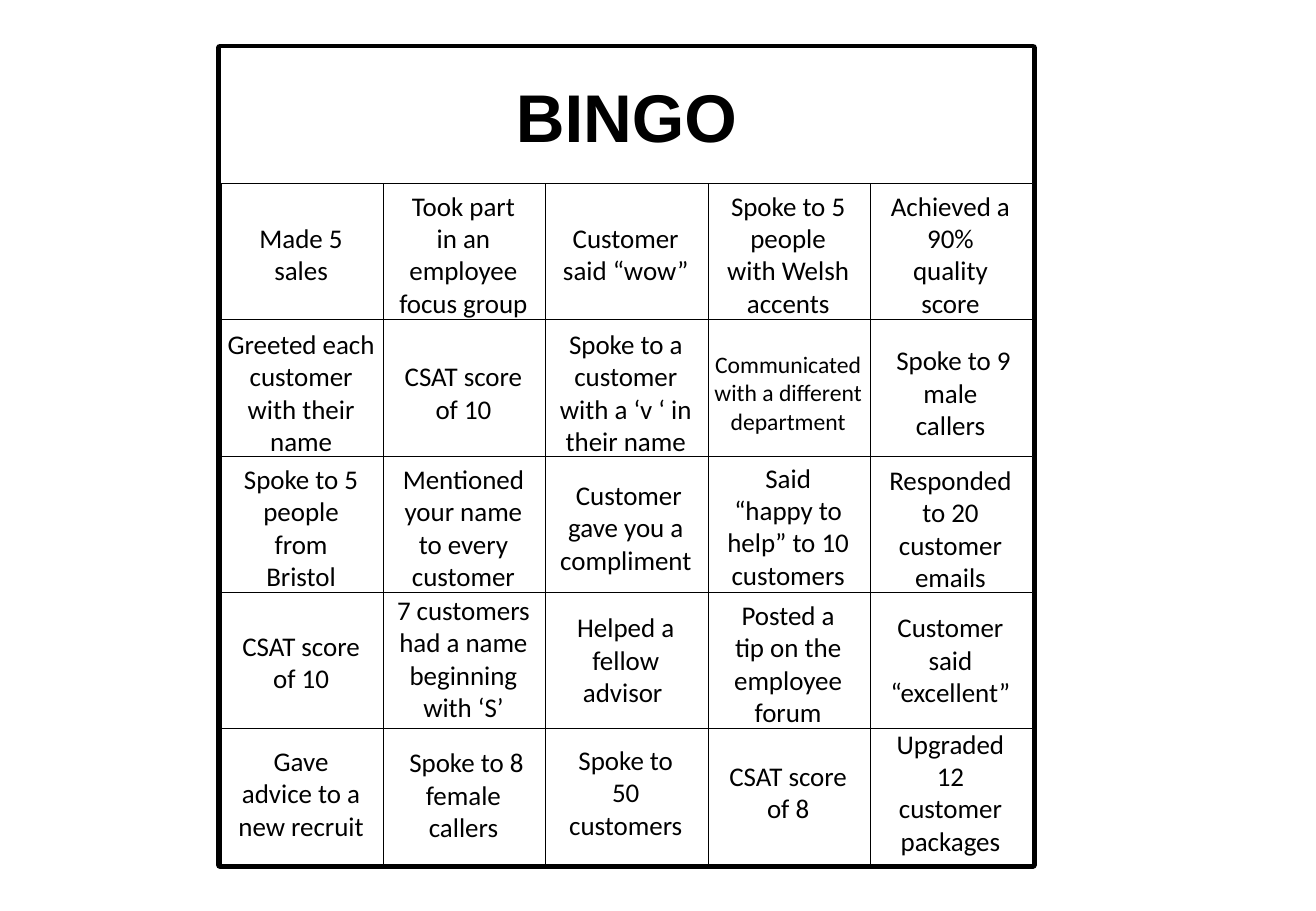
import pptx
import pptx.util
import pptx.dml.color
import pptx.enum.shapes
import pptx.enum.text

Inches = pptx.util.Inches

# Grid measures in inches
LEFT, TOP = 1.82, 0.39
CELL_W, CELL_H = 1.336, 1.122
COLS, ROWS = 5, 5
TEXT_H = 1.18
BLACK, WHITE = "000000", "FFFFFF"

# Each row: top of its texts, then (text, width, shift down, size)
TASKS = [
    (1.5, [
        ("Made 5 sales", 1.24, 0, 16),
        ("Took part in an employee focus group", 1.26, 0, 16),
        ("Customer said “wow”", 1.24, 0, 16),
        ("Spoke to 5 people with Welsh accents", 1.24, 0, 16),
        ("Achieved a 90% quality score", 1.24, 0, 16)]),
    (2.64, [
        ("Greeted each customer with their name", 1.42, 0, 16),
        ("CSAT score of 10", 1.24, 0, 16),
        ("Spoke to a customer with a ‘v ‘ in their name", 1.32, 0, 16),
        ("Communicated with a different department", 1.42, 0, 14),
        (" Spoke to 9 male callers", 1.24, 0, 16)]),
    (3.75, [
        ("Spoke to 5 people from Bristol", 1.24, 0, 16),
        ("Mentioned your name to every customer", 1.35, 0, 16),
        (" Customer gave you a compliment", 1.42, 0, 16),
        ("Said “happy to help” to 10 customers", 1.24, -0.01, 16),
        ("Responded to 20 customer emails", 1.24, 0.01, 16)]),
    (4.84, [
        ("CSAT score of 10", 1.24, 0.02, 16),
        ("7 customers had a name beginning with ‘S’", 1.42, -0.01, 16),
        ("Helped a fellow advisor ", 1.24, 0, 16),
        ("Posted a tip on the employee forum", 1.24, 0.03, 16),
        ("Customer said “excellent”", 1.24, 0, 16)]),
    (5.93, [
        ("Gave advice to a new recruit", 1.24, 0.01, 16),
        (" Spoke to 8 female callers", 1.24, 0.02, 16),
        ("Spoke to 50 customers", 1.24, 0, 16),
        ("CSAT score of 8", 1.24, 0, 16),
        ("Upgraded 12 customer packages", 1.24, 0, 16)]),
]


def color(code):
    return pptx.dml.color.RGBColor.from_string(code)


def add_box(slide, x, y, w, h, line, fill=None):
    box = slide.shapes.add_shape(
        pptx.enum.shapes.MSO_SHAPE.RECTANGLE,
        Inches(x), Inches(y), Inches(w), Inches(h))
    box.shadow.inherit = False
    if fill:
        box.fill.solid()
        box.fill.fore_color.rgb = color(fill)
    else:
        box.fill.background()
    box.line.color.rgb = color(BLACK)
    box.line.width = pptx.util.Pt(line)
    return box


def add_text(shape, text, size, font, bold=False, wrap=True):
    frame = shape.text_frame
    frame.word_wrap = wrap
    frame.vertical_anchor = pptx.enum.text.MSO_ANCHOR.MIDDLE
    para = frame.paragraphs[0]
    para.alignment = pptx.enum.text.PP_ALIGN.CENTER
    run = para.add_run()
    run.text = text
    run.font.size = pptx.util.Pt(size)
    run.font.name = font
    run.font.bold = bold
    run.font.color.rgb = color(BLACK)


def add_task(slide, col, top, text, width, shift, size):
    mid = LEFT + CELL_W * (col + 0.5) - 0.01
    box = slide.shapes.add_textbox(
        Inches(mid - width / 2), Inches(top + shift),
        Inches(width), Inches(TEXT_H))
    add_text(box, text, size, "Calibri")


def main():
    deck = pptx.Presentation()
    deck.slide_width = Inches(10.83)
    deck.slide_height = Inches(7.5)
    slide = deck.slides.add_slide(deck.slide_layouts[6])

    # Thick outer frame
    width = COLS * CELL_W
    add_box(slide, LEFT - 0.01, TOP, width + 0.01, (ROWS + 1) * CELL_H, 4.5)

    # Cells below the title
    for row in range(ROWS):
        for col in range(COLS):
            add_box(slide, LEFT + col * CELL_W, TOP + (row + 1) * CELL_H,
                    CELL_W, CELL_H, 0.75, WHITE)

    # Title band
    title = add_box(slide, LEFT - 0.01, TOP, width + 0.01, CELL_H, 0.75, WHITE)
    add_text(title, "BINGO", 40, "Arial", bold=True, wrap=False)

    # Task texts
    for top, tasks in TASKS:
        for col, task in enumerate(tasks):
            add_task(slide, col, top, *task)

    deck.save("out.pptx")


if __name__ == "__main__":
    main()
